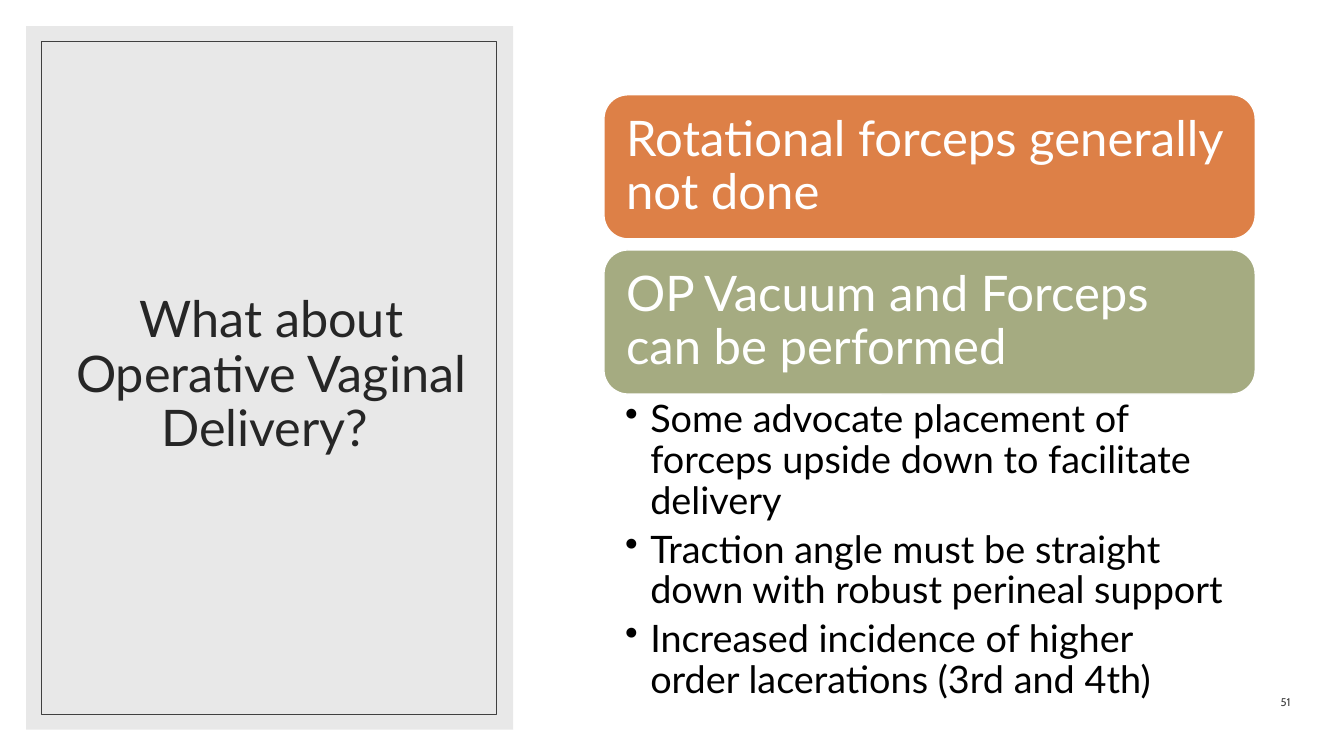
from dataclasses import dataclass

from lxml import etree
from pptx import Presentation
from pptx.dml.color import RGBColor
from pptx.enum.shapes import MSO_SHAPE
from pptx.enum.text import MSO_ANCHOR, PP_ALIGN
from pptx.oxml.ns import qn
from pptx.shapes.autoshape import Shape
from pptx.slide import Slide
from pptx.util import Inches, Pt

RECT, ROUND = MSO_SHAPE.RECTANGLE, MSO_SHAPE.ROUNDED_RECTANGLE
TOP, MIDDLE, BOTTOM = MSO_ANCHOR.TOP, MSO_ANCHOR.MIDDLE, MSO_ANCHOR.BOTTOM
LEFT, CENTER, RIGHT = PP_ALIGN.LEFT, PP_ALIGN.CENTER, PP_ALIGN.RIGHT


@dataclass(frozen=True)
class Theme:
    font: str = "Lato"
    page_font: str = "Cabin"
    white: str = "FFFFFF"
    black: str = "000000"
    panel: str = "D9D9D9"
    frame: str = "404040"
    ink: str = "262626"
    orange: str = "DD8047"
    green: str = "A5AB81"
    title_size: float = 36
    card_size: float = 35
    point_size: float = 27
    page_size: float = 8


@dataclass(frozen=True)
class Box:
    left: float
    top: float
    width: float
    height: float

    def place(self) -> tuple[int, int, int, int]:
        return (Inches(self.left), Inches(self.top),
                Inches(self.width), Inches(self.height))


@dataclass(frozen=True)
class Style:
    size: float
    color: str
    font: str
    align: PP_ALIGN = LEFT
    anchor: MSO_ANCHOR = MIDDLE
    inset: tuple[float, float, float, float] = (0.1, 0.05, 0.1, 0.05)
    line: float = 0.9
    after: float = 0
    bullet: bool = False


@dataclass(frozen=True)
class Card:
    text: str
    fill: str


THEME = Theme()
TITLE = Style(THEME.title_size, THEME.ink, THEME.font, CENTER)
CARD = Style(THEME.card_size, THEME.white, THEME.font, inset=(0.15,) * 4)
POINT = Style(THEME.point_size, THEME.black, THEME.font, anchor=TOP,
              inset=(0.21, 0.05, 0.27, 0.05), after=5.4, bullet=True)
PAGE = Style(THEME.page_size, THEME.frame, THEME.page_font, RIGHT, BOTTOM, line=1)

CARDS = (
    Card("Rotational forceps generally not done", THEME.orange),
    Card("OP Vacuum and Forceps can be performed", THEME.green),
)
POINTS = (
    "Some advocate placement of forceps upside down to facilitate delivery",
    "Traction angle must be straight down with robust perineal support",
    "Increased incidence of higher order lacerations (3rd and 4th)",
)
CARD_LEFT, CARD_TOP, CARD_WIDTH, CARD_HEIGHT, CARD_STEP = 5.99, 0.94, 6.46, 1.43, 1.54


def write(shape: Shape, lines: tuple[str, ...], style: Style) -> None:
    frame = shape.text_frame
    frame.word_wrap = True
    frame.vertical_anchor = style.anchor
    (frame.margin_left, frame.margin_top,
     frame.margin_right, frame.margin_bottom) = map(Inches, style.inset)
    for index, line in enumerate(lines):
        para = frame.paragraphs[0] if index == 0 else frame.add_paragraph()
        para.text = line
        para.alignment = style.align
        para.line_spacing = style.line
        para.space_after = Pt(style.after)
        para.font.name = style.font
        para.font.size = Pt(style.size)
        para.font.color.rgb = RGBColor.from_string(style.color)
        if style.bullet:
            props = para._p.get_or_add_pPr()
            props.set("marL", str(Inches(0.25)))
            props.set("indent", str(-Inches(0.25)))
            mark = etree.Element(qn("a:buChar"), char="•")
            props.find(qn("a:defRPr")).addprevious(mark)


def add_text(slide: Slide, box: Box, lines: tuple[str, ...], style: Style) -> None:
    write(slide.shapes.add_textbox(*box.place()), lines, style)


def add_block(slide: Slide, kind: MSO_SHAPE, box: Box, fill: str | None = None,
              line: str | None = None, weight: float = 1) -> Shape:
    shape = slide.shapes.add_shape(kind, *box.place())
    shape.shadow.inherit = False
    if fill:
        shape.fill.solid()
        shape.fill.fore_color.rgb = RGBColor.from_string(fill)
    else:
        shape.fill.background()
    if line:
        shape.line.color.rgb = RGBColor.from_string(line)
        shape.line.width = Pt(weight)
    else:
        shape.line.fill.background()
    return shape


def fade(shape: Shape, percent: int) -> None:
    """Set the opacity of a solid fill."""
    color = shape._element.spPr.find(qn("a:solidFill"))[0]
    etree.SubElement(color, qn("a:alpha"), val=str(percent * 1000))


def main() -> None:
    deck = Presentation()
    deck.slide_width, deck.slide_height = Inches(13.33), Inches(7.5)
    slide = deck.slides.add_slide(deck.slide_layouts[6])

    panel = add_block(slide, RECT, Box(0.26, 0.26, 4.83, 6.98), THEME.panel)
    fade(panel, 60)
    add_text(slide, Box(0.63, 0.61, 4.12, 6.24),
             ("What about Operative Vaginal Delivery? ",), TITLE)
    add_block(slide, RECT, Box(0.41, 0.41, 4.51, 6.68), line=THEME.frame, weight=0.5)

    for index, card in enumerate(CARDS):
        box = Box(CARD_LEFT, CARD_TOP + index * CARD_STEP, CARD_WIDTH, CARD_HEIGHT)
        shape = add_block(slide, ROUND, box, card.fill, THEME.white)
        write(shape, (card.text,), CARD)

    add_text(slide, Box(CARD_LEFT, 3.92, CARD_WIDTH, 2.61), POINTS, POINT)
    add_text(slide, Box(12, 6.78, 0.9, 0.3), ("51",), PAGE)
    deck.save("out.pptx")


if __name__ == "__main__":
    main()
